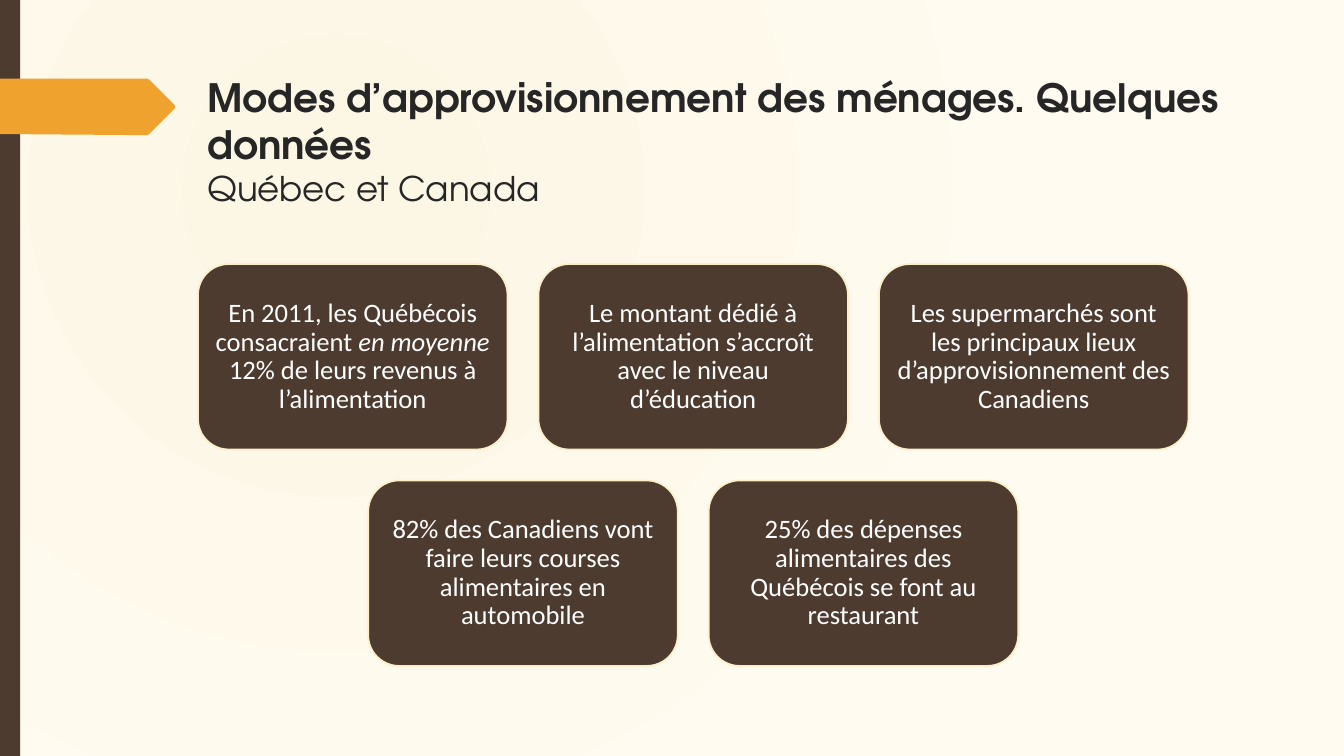
from dataclasses import dataclass

from lxml.etree import SubElement
from pptx import Presentation
from pptx.dml.color import RGBColor
from pptx.enum.shapes import MSO_SHAPE as Shape
from pptx.enum.text import MSO_ANCHOR as Anchor, PP_ALIGN as Align
from pptx.oxml.ns import qn
from pptx.util import Emu, Inches, Pt

WIDTH, HEIGHT = Inches(13.33), Inches(7.5)
BROWN, ORANGE, CREAM = "4E3B30", "F0A22E", "FBEEC9"
INK, WHITE = "262626", "FFFFFF"
TITLE_FONT, CARD_FONT = "TeX Gyre Adventor", "Calibri"

# Card grid, in percent of the slide
CARD_W, CARD_H = 23.03, 24.53
CARDS_CENTRE, CARDS_TOP = 51.58, 34.93
GAP_SHARE = 0.1  # gap between cards, as a share of card width


@dataclass
class Run:
    text: str
    italic: bool = False


@dataclass
class Card:
    runs: list[Run]


ROWS = [
    [
        Card([Run("En 2011, les Québécois consacraient "),
              Run("en moyenne", italic=True),
              Run(" 12% de leurs revenus à l’alimentation")]),
        Card([Run("Le montant dédié à l’alimentation s’accroît avec le niveau d’éducation")]),
        Card([Run("Les supermarchés sont les principaux lieux d’approvisionnement des Canadiens")]),
    ],
    [
        Card([Run("82% des Canadiens vont faire leurs courses alimentaires en automobile")]),
        Card([Run("25% des dépenses alimentaires des Québécois se font au restaurant")]),
    ],
]

# Tag outline, in percent of the slide
TAG = [(0, 10.4), (10.95, 10.4), (11.1, 10.53), (12.98, 13.87), (13.03, 14.13),
       (12.98, 14.4), (11.1, 17.73), (10.95, 17.87), (10.2, 17.87), (0, 17.73)]


def across(percent: float) -> Emu:
    return Emu(round(WIDTH * percent / 100))


def down(percent: float) -> Emu:
    return Emu(round(HEIGHT * percent / 100))


def colour(value: str) -> RGBColor:
    return RGBColor.from_string(value)


def paint(sp, fill: str, line: str | None = None) -> None:
    sp.shadow.inherit = False
    sp.fill.solid()
    sp.fill.fore_color.rgb = colour(fill)
    if line:
        sp.line.color.rgb = colour(line)
        sp.line.width = Pt(1.25)
    else:
        sp.line.fill.background()


def add_run(p, text: str, ink: str, **font) -> None:
    r = p.add_run()
    r.text = text
    r.font.color.rgb = colour(ink)
    for name, value in font.items():
        setattr(r.font, name, value)


def add_background(s) -> None:
    fill = s.background.fill
    fill.gradient()
    for stop, value, position in zip(fill.gradient_stops, ("FCF6E5", "FFFBF0"), (0, 1)):
        stop.color.rgb = colour(value)
        stop.position = position
    # Swap the linear direction for a circle centred in the upper left
    grad = s.background.fill._fill._gradFill
    grad.remove(grad.find(qn("a:lin")))
    circle = SubElement(grad, qn("a:path"), {"path": "circle"})
    SubElement(circle, qn("a:fillToRect"),
               {"l": "50000", "t": "50000", "r": "100000", "b": "100000"})


def add_title(s) -> None:
    tf = s.shapes.add_textbox(across(14.7), down(9.07), across(79.67), down(18.67)).text_frame
    tf.word_wrap = True
    p = tf.paragraphs[0]
    add_run(p, "Modes d’approvisionnement des ménages. Quelques données", INK,
            name=TITLE_FONT, size=Pt(27.9), bold=True)
    p.add_line_break()
    add_run(p, "Québec et Canada", INK, name=TITLE_FONT, size=Pt(24.3), bold=False)


def add_card(s, card: Card, left: Emu, top: Emu) -> None:
    sp = s.shapes.add_shape(Shape.ROUNDED_RECTANGLE, left, top, across(CARD_W), down(CARD_H))
    paint(sp, BROWN, CREAM)
    tf = sp.text_frame
    inset = Inches(0.08)
    frame = {"word_wrap": True, "vertical_anchor": Anchor.MIDDLE,
             "margin_left": inset, "margin_right": inset,
             "margin_top": inset, "margin_bottom": inset}
    for name, value in frame.items():
        setattr(tf, name, value)
    p = tf.paragraphs[0]
    p.alignment = Align.CENTER
    p.line_spacing = 0.9
    for run in card.runs:
        add_run(p, run.text, WHITE, name=CARD_FONT, size=Pt(19), italic=run.italic)


def add_cards(s) -> None:
    card_w, card_h = across(CARD_W), down(CARD_H)
    gap = round(card_w * GAP_SHARE)
    for row, cards in enumerate(ROWS):
        row_w = len(cards) * (card_w + gap) - gap
        left = across(CARDS_CENTRE) - row_w // 2
        top = down(CARDS_TOP) + row * (card_h + gap)
        for col, card in enumerate(cards):
            add_card(s, card, Emu(left + col * (card_w + gap)), Emu(top))


def main() -> None:
    prs = Presentation()
    prs.slide_width, prs.slide_height = WIDTH, HEIGHT
    s = prs.slides.add_slide(prs.slide_layouts[6])
    add_background(s)

    # Side bar and tag
    paint(s.shapes.add_shape(Shape.RECTANGLE, 0, 0, across(1.5), HEIGHT), BROWN)
    first, *rest = [(across(x), down(y)) for x, y in TAG]
    outline = s.shapes.build_freeform(*first)
    outline.add_line_segments(rest, close=True)
    paint(outline.convert_to_shape(), ORANGE)

    # Text
    add_title(s)
    add_cards(s)
    prs.save("out.pptx")


if __name__ == "__main__":
    main()
